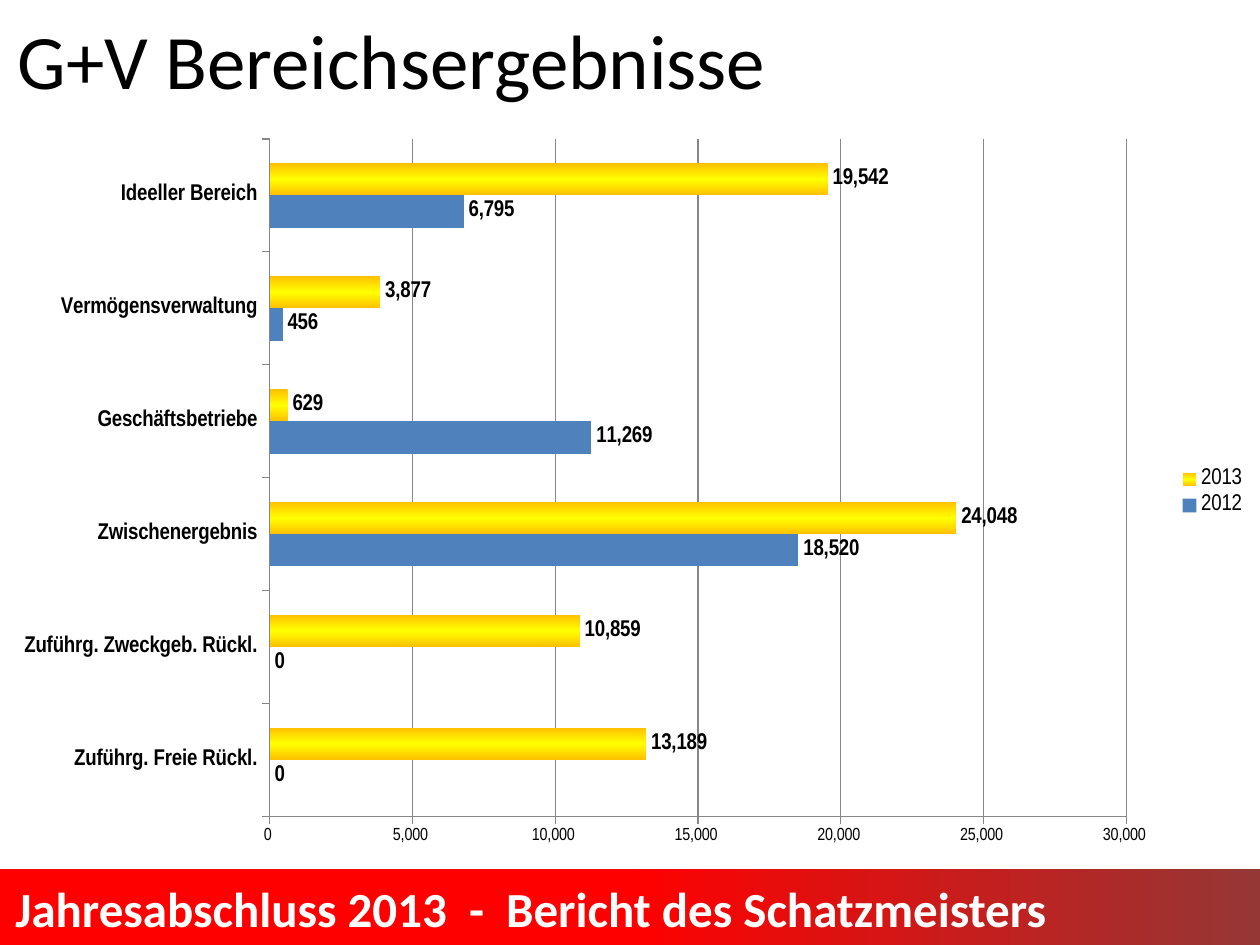
from copy import deepcopy

from lxml import etree
from pptx import Presentation
from pptx import util as u
from pptx.chart.data import CategoryChartData
from pptx.dml.color import RGBColor
from pptx.enum import chart as ch, shapes, text
from pptx.oxml.ns import qn

TITLE = "G+V Bereichsergebnisse"
FOOTER = "Jahresabschluss 2013  -  Bericht des Schatzmeisters"
ROWS = [  # bottom to top: label, 2012, 2013
    ("Zuführg. Freie Rückl.", 0, 13189),
    ("Zuführg. Zweckgeb. Rückl.", 0, 10859),
    ("Zwischenergebnis", 18520, 24048),
    ("Geschäftsbetriebe", 11269, 629),
    ("Vermögensverwaltung", 456, 3877),
    ("Ideeller Bereich", 6795, 19542),
]
YEARS = ["2012", "2013"]
NUM = "#,##0_ ;[Red]\\-#,##0\\ "
COLORS = {"black": "000000", "white": "FFFFFF", "red": "FF0000", "wine": "953735",
          "blue": "4F81BD", "gold": "FFC000", "yellow": "FFFF00", "grey": "868686"}
BOXES = {"title": (5, 6, 1014, 85), "chart": (0, 125, 1260, 735),
         "band": (0, 869, 1260, 76), "footer": (3, 872, 1233, 72)}
PLOT = {"x": 270, "y": 139, "w": 857, "h": 678}
SCALE = 914400 / 126


def px(n):
    return u.Emu(round(n * SCALE))


def rgb(name):
    return RGBColor.from_string(COLORS[name])


def style(font, size, name="Arial Narrow", bold=False, color="black"):
    values = {"size": u.Pt(size), "name": name, "bold": bold}
    for key, value in values.items():
        setattr(font, key, value)
    font.color.rgb = rgb(color)


def blend(fill, root, names, angle):
    """Fill with a gradient whose colours sit at equal steps."""
    fill.gradient()
    fill.gradient_angle = angle
    stops = root.find(".//" + qn("a:gsLst"))
    while len(stops) < len(names):
        stops.append(deepcopy(stops[0]))
    for i, (stop, name) in enumerate(zip(fill.gradient_stops, names)):
        stop.position = i / (len(names) - 1)
        stop.color.rgb = rgb(name)


def write(shape, words, size, bold=False, color="black"):
    frame = shape.text_frame
    frame.text = words
    frame.word_wrap = True
    frame.auto_size = text.MSO_AUTO_SIZE.NONE
    frame.vertical_anchor = text.MSO_ANCHOR.TOP
    para = frame.paragraphs[0]
    para.alignment = text.PP_ALIGN.LEFT
    style(para.font, size, "Calibri", bold, color)


def place_plot(chart):
    """Fix the inner plot area as fractions of the chart frame."""
    left, top, width, height = BOXES["chart"]
    parts = {"x": (PLOT["x"] - left) / width, "y": (PLOT["y"] - top) / height,
             "w": PLOT["w"] / width, "h": PLOT["h"] / height}
    area = chart.element.find(".//" + qn("c:plotArea"))
    for old in area.findall(qn("c:layout")):
        area.remove(old)
    layout = etree.Element(qn("c:layout"))
    area.insert(0, layout)
    manual = etree.SubElement(layout, qn("c:manualLayout"))
    items = [("layoutTarget", "inner"), ("xMode", "edge"), ("yMode", "edge")]
    for tag, value in items + [(k, f"{v:.3f}") for k, v in parts.items()]:
        etree.SubElement(manual, qn("c:" + tag), val=value)


def add_bars(slide):
    data = CategoryChartData(number_format=NUM)
    data.categories = [row[0] for row in ROWS]
    for i, year in enumerate(YEARS, 1):
        data.add_series(year, [row[i] for row in ROWS])
    chart = slide.shapes.add_chart(
        ch.XL_CHART_TYPE.BAR_CLUSTERED, *map(px, BOXES["chart"]), data).chart
    style(chart.font, 10, "Calibri")
    chart.has_title = False
    chart.has_legend = True
    chart.legend.position = ch.XL_LEGEND_POSITION.RIGHT
    chart.legend.include_in_layout = False
    style(chart.legend.font, 13)
    place_plot(chart)

    for axis, size, bold, form in ((chart.category_axis, 13, True, "General"),
                                   (chart.value_axis, 10, False, NUM)):
        style(axis.tick_labels.font, size, bold=bold)
        axis.tick_labels.number_format = form
        axis.tick_labels.number_format_is_linked = False
        axis.major_tick_mark = ch.XL_TICK_MARK.OUTSIDE
        axis.format.line.color.rgb = rgb("grey")
    axis = chart.value_axis
    axis.minimum_scale, axis.maximum_scale, axis.major_unit = 0, 30000, 5000
    axis.has_major_gridlines = True
    axis.major_gridlines.format.line.color.rgb = rgb("grey")

    plot = chart.plots[0]
    plot.gap_width, plot.overlap, plot.vary_by_categories = 150, 0, False
    old, new = plot.series
    old.format.fill.solid()
    old.format.fill.fore_color.rgb = rgb("blue")
    blend(new.format.fill, new._element, ["gold", "yellow", "gold"], 90)
    for series in plot.series:
        labels = series.data_labels
        values = {"show_value": True, "number_format": NUM,
                  "number_format_is_linked": False,
                  "position": ch.XL_LABEL_POSITION.OUTSIDE_END}
        for key, value in values.items():
            setattr(labels, key, value)
        style(labels.font, 13, bold=True)


def main():
    deck = Presentation()
    deck.slide_width, deck.slide_height = px(1260), px(945)
    slide = deck.slides.add_slide(deck.slide_layouts[5])

    band = slide.shapes.add_shape(shapes.MSO_SHAPE.RECTANGLE, *map(px, BOXES["band"]))
    band.shadow.inherit = False
    band.line.fill.background()
    blend(band.fill, band._element, ["red", "red", "wine"], 0)
    footer = slide.shapes.add_textbox(*map(px, BOXES["footer"]))
    write(footer, FOOTER, 28, True, "white")

    title = slide.shapes.title
    title.left, title.top, title.width, title.height = map(px, BOXES["title"])
    write(title, TITLE, 44)
    add_bars(slide)
    deck.save("out.pptx")


if __name__ == "__main__":
    main()
